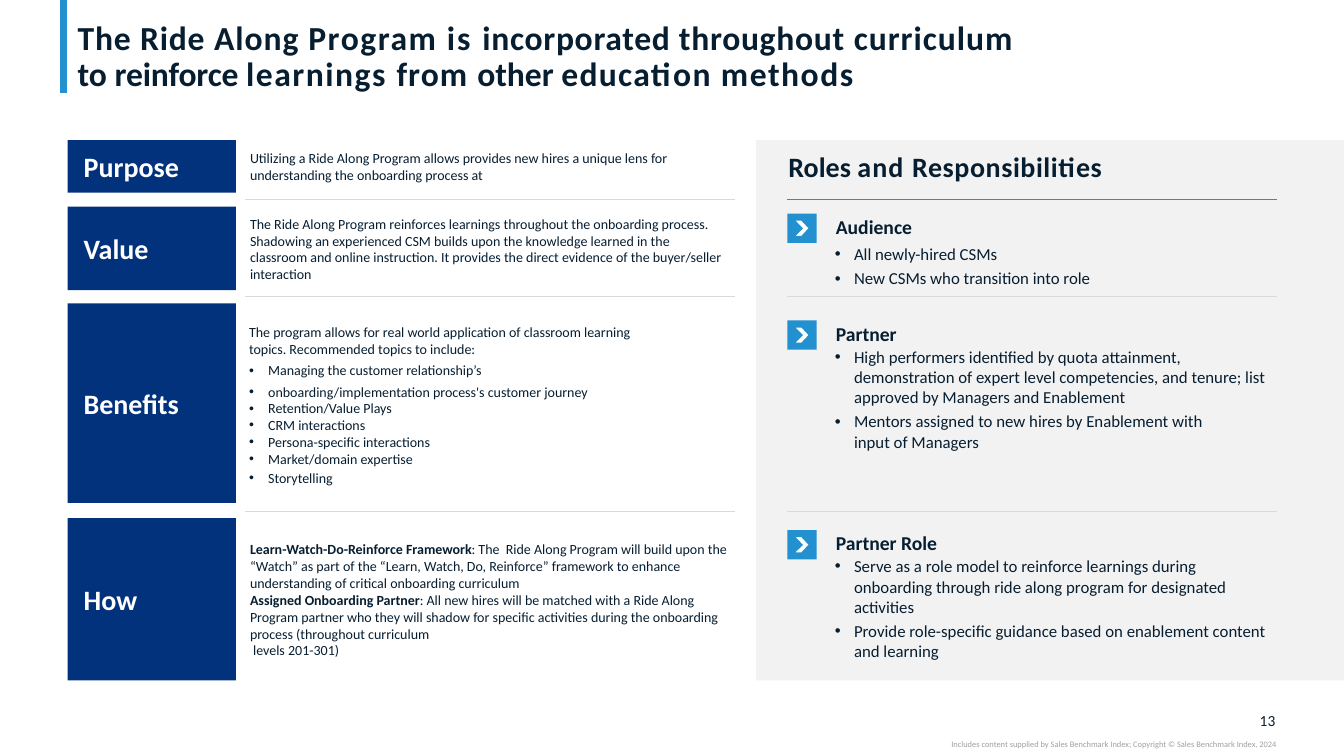
from dataclasses import dataclass

from pptx import Presentation
from pptx.dml.color import RGBColor
from pptx.enum.shapes import MSO_CONNECTOR, MSO_SHAPE
from pptx.enum.text import MSO_ANCHOR, MSO_AUTO_SIZE, PP_ALIGN
from pptx.oxml.ns import qn
from pptx.oxml.xmlchemy import OxmlElement
from pptx.util import Inches, Pt

TOP, MIDDLE, BOTTOM = MSO_ANCHOR.TOP, MSO_ANCHOR.MIDDLE, MSO_ANCHOR.BOTTOM
LEFT, RIGHT = PP_ALIGN.LEFT, PP_ALIGN.RIGHT
NO_AUTOFIT = MSO_AUTO_SIZE.NONE
RECTANGLE = MSO_SHAPE.RECTANGLE
STRAIGHT = MSO_CONNECTOR.STRAIGHT

COLORS = {"ink": "071E31", "navy": "03327C", "blue": "2391CF", "white": "FFFFFF",
          "panel": "F2F2F2", "rule": "D9D9D9", "credit": "A0A0A0"}
FONT = "Calibri"
COMPARISON_LAYOUT = 4
BULLET_INDENT = 0.19
RULE_TOPS = (1.98, 2.94, 5.07)
CHEVRON = ((80, 70), (140, 70), (210, 145), (140, 220), (80, 220), (155, 145))

Box = tuple[float, float, float, float]
Insets = tuple[float, float, float, float]
TEXT_INSETS = (0, 0.01, 0, 0)


@dataclass
class Run:
    text: str
    bold: bool = False
    spacing: float = 0


@dataclass
class Para:
    runs: list[Run]
    size: float = 10
    before: float = 0
    bullet: bool = False
    line: float | Pt = 1.0
    margin: float = 0.01
    right: float = 0
    color: str = "ink"
    align: PP_ALIGN = LEFT


@dataclass
class Topic:
    label: str
    top: float
    height: float
    text_top: float
    text_height: float
    paras: list[Para]


@dataclass
class Role:
    label: str
    top: float
    height: float
    bullets: list[Para]


def plain(text: str, **options) -> Para:
    return Para([Run(text)], **options)


def bullet(text: str, before: float = 0, **options) -> Para:
    return Para([Run(text)], before=before, bullet=True, **options)


TITLE = Para([Run("The Ride ", True, 0.6), Run("Along ", True, 0.7), Run("Program ", True, 1.1),
              Run("is ", True, 1.5), Run("incorporated throughout ", True, 0.5),
              Run("curriculum \n", True, 0.7), Run("to ", True), Run("reinforce ", True, -0.1),
              Run("learnings ", True, 1.1), Run("from ", True, 0.8), Run("other ", True),
              Run("education ", True, 0.9), Run("methods", True, 1.1)],
             size=24, line=0.9, margin=0)
PANEL_HEADING = Para([Run("Roles ", True), Run("and ", True, 0.8),
                      Run("Responsibilities", True, 0.4)], size=20)

TOPICS = [
    Topic("Purpose", 1.39, 0.52, 1.47, 0.35, [
        plain("Utilizing a Ride Along Program allows provides new hires a unique lens for "
              "understanding the onboarding process at")]),
    Topic("Value", 2.05, 0.83, 2.12, 0.69, [
        plain("The Ride Along Program reinforces learnings throughout the onboarding process. "
              "Shadowing an experienced CSM builds upon the knowledge learned in the classroom "
              "and online instruction. It provides the direct evidence of the buyer/seller "
              "interaction")]),
    Topic("Benefits", 3.01, 1.98, 3.18, 1.65, [
        plain("The program allows for real world application of classroom learning",
              line=Pt(13.2), margin=0),
        plain("topics. Recommended topics to include:", margin=0),
        bullet("Managing the customer relationship’s", 3.1),
        bullet("onboarding/implementation process's customer journey", 3.1),
        bullet("Retention/Value Plays"),
        bullet("CRM interactions"),
        bullet("Persona-specific interactions"),
        bullet("Market/domain expertise"),
        bullet("Storytelling", line=Pt(13.6))]),
    Topic("How", 5.14, 1.61, 5.35, 1.19, [
        Para([Run("Learn-Watch-Do-Reinforce Framework", True),
              Run(": The  Ride Along Program will build upon the “Watch” as part of the “Learn, "
                  "Watch, Do, Reinforce” framework to enhance understanding of critical "
                  "onboarding curriculum")]),
        Para([Run("Assigned Onboarding Partner", True),
              Run(": All new hires will be matched with a Ride Along Program partner who they "
                  "will shadow for specific activities during the onboarding process "
                  "(throughout curriculum\n levels 201-301)")])]),
]

ROLES = [
    Role("Audience", 2.12, 0.75, [
        bullet("All newly-hired CSMs", 4, size=12),
        bullet("New CSMs who transition into role", 3, size=12)]),
    Role("Partner", 3.18, 1.32, [
        bullet("High performers identified by quota attainment, demonstration of expert level "
               "competencies, and tenure; list approved by Managers and Enablement", 1, size=12),
        bullet("Mentors assigned to new hires by Enablement with input of Managers", 3,
               size=12, right=0.5)]),
    Role("Partner Role", 5.26, 1.35, [
        bullet("Serve as a role model to reinforce learnings during onboarding through ride "
               "along program for designated activities", 1, size=12),
        bullet("Provide role-specific guidance based on enablement content and learning", 3,
               size=12)]),
]


def apply(target, values: dict) -> None:
    for name, value in values.items():
        setattr(target, name, value)


def rgb(color: str) -> RGBColor:
    return RGBColor.from_string(COLORS[color])


def set_bullet(paragraph, para: Para) -> None:
    """Set indents and the bullet, switching off any inherited one."""
    properties = paragraph._p.get_or_add_pPr()
    margin = BULLET_INDENT if para.bullet else para.margin
    indent = -BULLET_INDENT if para.bullet else 0
    for key, inches in (("marL", margin), ("marR", para.right), ("indent", indent)):
        properties.set(key, str(int(Inches(inches))))
    mark = OxmlElement("a:buChar" if para.bullet else "a:buNone")
    if para.bullet:
        mark.set("char", "•")
    properties.append(mark)


def add_break(paragraph, size: float) -> None:
    """Add a line break that keeps the size of the text around it."""
    paragraph.add_line_break()
    properties = OxmlElement("a:rPr")
    properties.set("sz", str(int(size * 100)))
    paragraph._p.findall(qn("a:br"))[-1].append(properties)


def write(shape, paras: list[Para], anchor=TOP, insets: Insets = TEXT_INSETS) -> None:
    frame = shape.text_frame
    margins = zip(("margin_left", "margin_top", "margin_right", "margin_bottom"), insets)
    apply(frame, {"word_wrap": True, "auto_size": NO_AUTOFIT, "vertical_anchor": anchor,
                  **{side: Inches(inset) for side, inset in margins}})
    for index, para in enumerate(paras):
        paragraph = frame.add_paragraph() if index else frame.paragraphs[0]
        set_bullet(paragraph, para)
        apply(paragraph, {"alignment": para.align, "line_spacing": para.line,
                          "space_before": Pt(para.before), "space_after": Pt(0)})
        for part in para.runs:
            for number, text in enumerate(part.text.split("\n")):
                if number:
                    add_break(paragraph, para.size)
                if not text:
                    continue
                run = paragraph.add_run()
                run.text = text
                apply(run.font, {"name": FONT, "size": Pt(para.size), "bold": part.bold})
                run.font.color.rgb = rgb(para.color)
                run._r.get_or_add_rPr().set("spc", str(round(part.spacing * 100)))


def place(shape, box: Box):
    apply(shape, dict(zip(("left", "top", "width", "height"), map(Inches, box))))
    return shape


def add_text(slide, box: Box, paras: list[Para], anchor=TOP) -> None:
    write(slide.shapes.add_textbox(*map(Inches, box)), paras, anchor)


def paint(shape, color: str):
    shape.shadow.inherit = False
    shape.fill.solid()
    shape.fill.fore_color.rgb = rgb(color)
    shape.line.fill.background()
    return shape


def add_block(slide, box: Box, color: str):
    return paint(slide.shapes.add_shape(RECTANGLE, *map(Inches, box)), color)


def add_rule(slide, start: tuple, end: tuple, color: str, width: float = 0.5) -> None:
    rule = slide.shapes.add_connector(STRAIGHT, *map(Inches, start + end))
    rule.line.color.rgb = rgb(color)
    rule.line.width = Pt(width)
    rule._element.spPr.append(OxmlElement("a:effectLst"))


def add_badge(slide, left: float, top: float) -> None:
    """Draw a blue square with a chevron cut out over a white backing."""
    add_block(slide, (left + 0.03, top + 0.03, 0.23, 0.23), "white")
    outline = slide.shapes.build_freeform(0, 0, scale=Inches(0.001))
    outline.add_line_segments(((290, 0), (290, 290), (0, 290)), close=True)
    outline.move_to(*CHEVRON[0])
    outline.add_line_segments(CHEVRON[1:], close=True)
    paint(outline.convert_to_shape(Inches(left), Inches(top)), "blue")


def main() -> None:
    deck = Presentation()
    apply(deck, {"slide_width": Inches(13.33), "slide_height": Inches(7.5)})
    slide = deck.slides.add_slide(deck.slide_layouts[COMPARISON_LAYOUT])
    benefits_list, *role_lists = [slide.placeholders[index] for index in range(1, 5)]

    panel = add_block(slide, (7.5, 1.39, 5.83, 5.36), "panel")
    slide.shapes.element.insert(2, panel.element)  # behind the placeholders
    add_rule(slide, (0.63, 0), (0.63, 0.92), "blue", 5)
    write(place(slide.shapes.title, (0.67, 0.09, 11.99, 0.84)), [TITLE], BOTTOM, (0.1, 0, 0.1, 0))

    for topic in TOPICS:
        label = add_block(slide, (0.67, topic.top, 1.67, topic.height), "navy")
        write(label, [Para([Run(topic.label, True)], size=20, color="white", margin=0)],
              MIDDLE, (0.16, 0.05, 0.16, 0.05))
        text_box = (2.47, topic.text_top, 4.74, topic.text_height)
        if any(para.bullet for para in topic.paras):
            write(place(benefits_list, text_box), topic.paras, MIDDLE)
        else:
            add_text(slide, text_box, topic.paras, MIDDLE)

    add_text(slide, (7.81, 1.47, 5.21, 0.35), [PANEL_HEADING])
    for role, role_list in zip(ROLES, role_lists):
        heading = Para([Run(role.label, True)], size=14)
        write(place(role_list, (8.28, role.top, 4.38, role.height)), [heading, *role.bullets])
        add_badge(slide, 7.81, role.top)

    for top in RULE_TOPS:
        add_rule(slide, (2.43, top), (7.29, top), "rule")
        add_rule(slide, (7.81, top), (12.67, top), "blue" if top == RULE_TOPS[0] else "rule")

    add_text(slide, (12.32, 7.05, 0.33, 0.19), [plain("13", size=11, align=RIGHT)], MIDDLE)
    add_text(slide, (7.5, 7.32, 5.16, 0.1), [
        plain("Includes content supplied by Sales Benchmark Index; "
              "Copyright © Sales Benchmark Index, 2024", size=6, color="credit", align=RIGHT)])
    deck.save("out.pptx")


if __name__ == "__main__":
    main()
